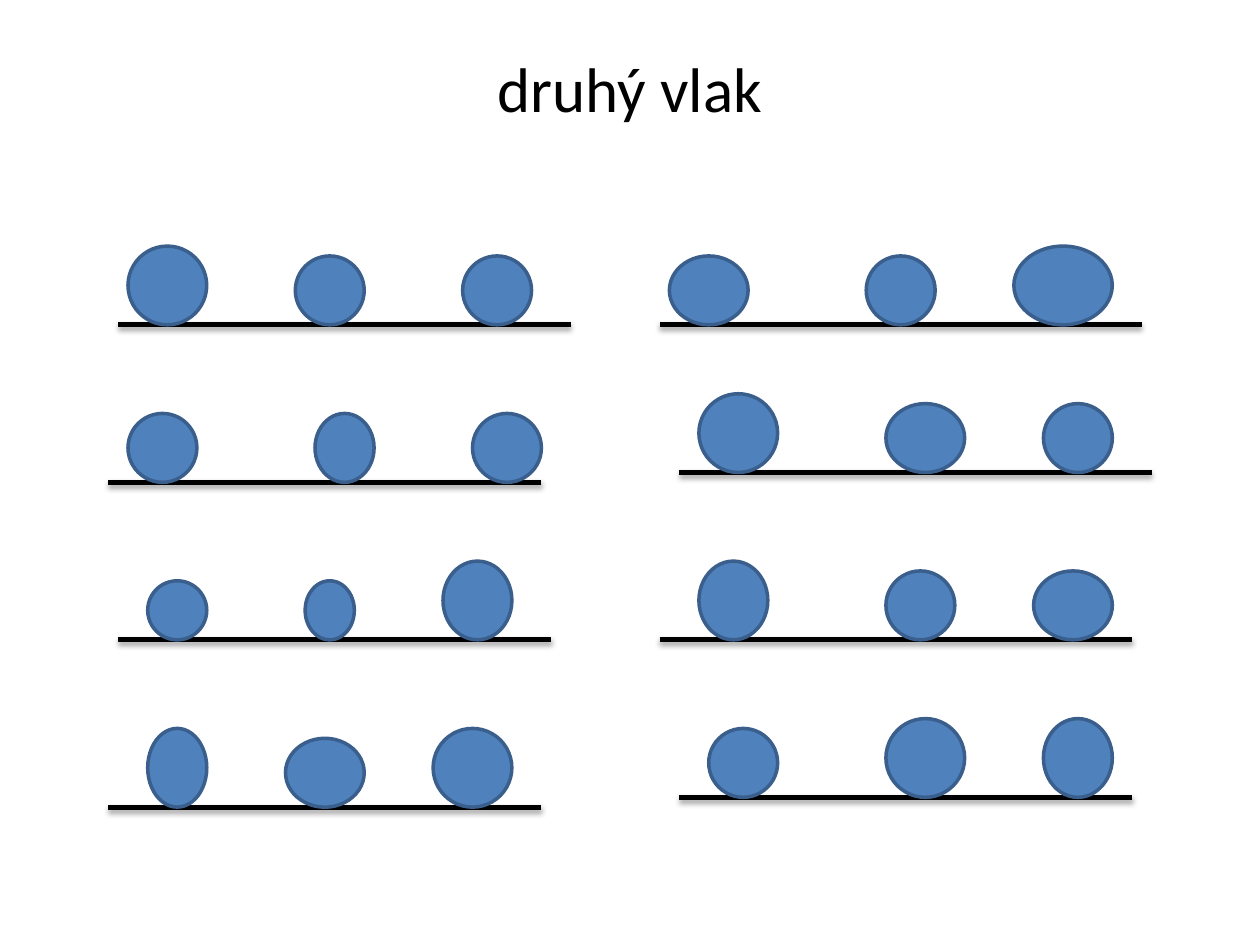
"""Build a slide of eight wagons, each a rail carrying three wheels."""
from dataclasses import dataclass

from lxml import etree
from pptx import Presentation
from pptx.dml.color import RGBColor
from pptx.enum.shapes import MSO_CONNECTOR, MSO_SHAPE
from pptx.enum.text import MSO_ANCHOR, PP_ALIGN
from pptx.oxml import parse_xml
from pptx.oxml.ns import nsdecls, qn
from pptx.slide import Slide
from pptx.util import Inches, Pt

STRAIGHT = MSO_CONNECTOR.STRAIGHT
OVAL = MSO_SHAPE.OVAL
MIDDLE = MSO_ANCHOR.MIDDLE
CENTER = PP_ALIGN.CENTER

COLORS = {"text": "000000", "rail": "000000", "wheel": "4F81BD", "rim": "3A5F8C"}
FONT = "Calibri"
WIDTH, HEIGHT = Inches(10), Inches(7.5)
COLS = 128
UNIT = WIDTH // COLS


@dataclass(frozen=True)
class Wheel:
    left: int
    width: int
    height: int


@dataclass(frozen=True)
class Wagon:
    start: int
    end: int
    row: int
    wheels: tuple[Wheel, ...]


WAGONS = (
    Wagon(11, 55, 82, (Wheel(15, 6, 8), Wheel(29, 8, 7), Wheel(44, 8, 8))),
    Wagon(69, 115, 81, (Wheel(72, 7, 7), Wheel(90, 8, 8), Wheel(106, 7, 8))),
    Wagon(12, 56, 65, (Wheel(15, 6, 6), Wheel(31, 5, 6), Wheel(45, 7, 8))),
    Wagon(67, 115, 65, (Wheel(71, 7, 8), Wheel(90, 7, 7), Wheel(105, 8, 7))),
    Wagon(11, 55, 49, (Wheel(13, 7, 7), Wheel(32, 6, 7), Wheel(48, 7, 7))),
    Wagon(117, 69, 48, (Wheel(71, 8, 8), Wheel(90, 8, 7), Wheel(106, 7, 7))),
    Wagon(12, 58, 33, (Wheel(13, 8, 8), Wheel(30, 7, 7), Wheel(47, 7, 7))),
    Wagon(67, 116, 33, (Wheel(68, 8, 7), Wheel(88, 7, 7), Wheel(103, 10, 8))),
)


def rgb(name: str) -> RGBColor:
    """Return the palette colour of that name."""
    return RGBColor.from_string(COLORS[name])


def add_title(s: Slide, text: str) -> None:
    """Place and format the slide title."""
    title = s.shapes.title
    title.left, title.top = int(WIDTH * 0.05), int(HEIGHT * 0.04)
    title.width, title.height = int(WIDTH * 0.9), Inches(0.79)
    tf = title.text_frame
    tf.text = text
    tf.vertical_anchor = MIDDLE
    p = tf.paragraphs[0]
    p.alignment = CENTER
    font = p.runs[0].font
    font.name, font.size = FONT, Pt(36)
    font.color.rgb = rgb("text")


def add_rail(s: Slide, wagon: Wagon) -> None:
    """Draw the rail of a wagon with a soft shadow below."""
    y = wagon.row * UNIT
    rail = s.shapes.add_connector(STRAIGHT, wagon.start * UNIT, y, wagon.end * UNIT, y)
    rail.line.color.rgb = rgb("rail")
    rail.line.width = Pt(3)
    effects = parse_xml(f"<a:effectLst {nsdecls('a')}/>")
    shadow = etree.SubElement(
        effects, qn("a:outerShdw"), blurRad=str(Pt(3.1)), dist=str(Pt(1.8)),
        dir="5400000", rotWithShape="0")
    color = etree.SubElement(shadow, qn("a:srgbClr"), val=COLORS["rail"])
    etree.SubElement(color, qn("a:alpha"), val="35000")
    rail._element.spPr.append(effects)


def add_wheel(s: Slide, wheel: Wheel, row: int) -> None:
    """Draw a wheel standing on the given grid row."""
    sp = s.shapes.add_shape(
        OVAL, wheel.left * UNIT, (row - wheel.height) * UNIT,
        wheel.width * UNIT, wheel.height * UNIT)
    sp.shadow.inherit = False
    sp.fill.solid()
    sp.fill.fore_color.rgb = rgb("wheel")
    sp.line.color.rgb = rgb("rim")
    sp.line.width = Pt(2)


def main() -> None:
    """Build and save the presentation."""
    prs = Presentation()
    prs.slide_width, prs.slide_height = WIDTH, HEIGHT
    s = prs.slides.add_slide(prs.slide_layouts[5])
    add_title(s, "druhý vlak")
    for wagon in WAGONS:
        add_rail(s, wagon)
    for wagon in reversed(WAGONS):
        for wheel in wagon.wheels:
            add_wheel(s, wheel, wagon.row)
    prs.save("out.pptx")


if __name__ == "__main__":
    main()
